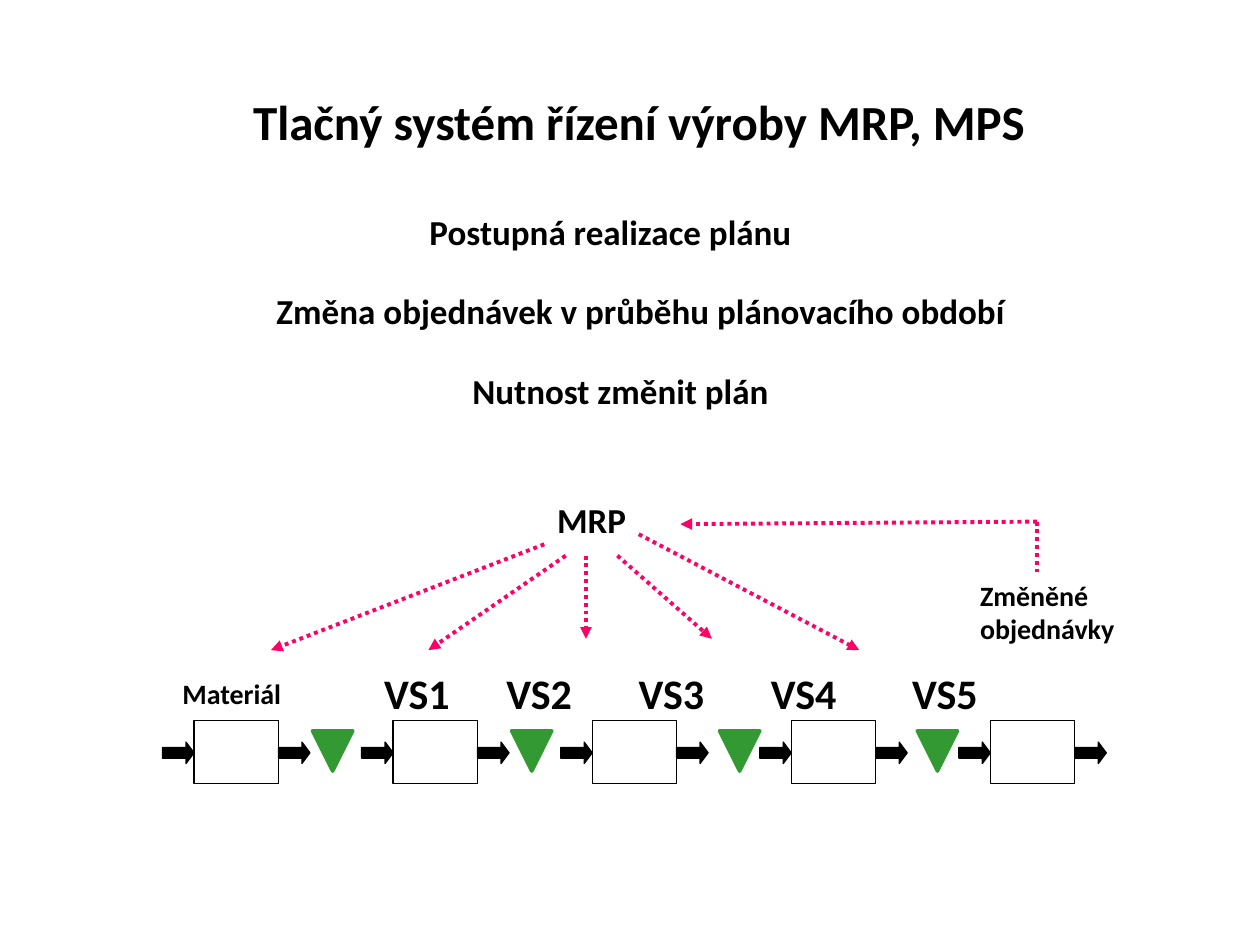
"""Build the slide on push production control with MRP and MPS."""
import lxml.etree
import pptx
import pptx.dml.color
import pptx.enum.dml
import pptx.enum.shapes
import pptx.enum.text
import pptx.oxml.ns
import pptx.util
from dataclasses import dataclass
from pptx.util import Inches

SHAPES = pptx.enum.shapes.MSO_SHAPE
ALIGN = pptx.enum.text.PP_ALIGN


@dataclass(frozen=True)
class Theme:
    """Colours, font and type sizes of the slide."""
    ink: str = "000000"
    paper: str = "FFFFFF"
    signal: str = "FF0066"
    buffer: str = "339933"
    font: str = "Calibri"
    title: int = 28
    station: int = 24
    body: int = 20
    label: int = 16


THEME = Theme()


def rgb(code):
    """Return the colour for a hex code."""
    return pptx.dml.color.RGBColor.from_string(code)


def apply(target, formats):
    """Set every attribute named in formats on target."""
    for name, value in formats.items():
        setattr(target, name, value)


def add_element(parent, tag, **attributes):
    """Append a DrawingML element to parent and return it."""
    return lxml.etree.SubElement(parent, pptx.oxml.ns.qn(tag), attributes)


def write(holder, wording, size, align):
    """Write one bold paragraph into a shape or text box and return it."""
    apply(holder.text_frame, {
        "word_wrap": True,
        "auto_size": pptx.enum.text.MSO_AUTO_SIZE.SHAPE_TO_FIT_TEXT,
        "vertical_anchor": pptx.enum.text.MSO_ANCHOR.TOP,
    })
    paragraph = holder.text_frame.paragraphs[0]
    paragraph.alignment = align
    run = paragraph.add_run()
    run.text = wording
    apply(run.font, {"name": THEME.font, "size": pptx.util.Pt(size), "bold": True})
    run.font.color.rgb = rgb(THEME.ink)
    return paragraph


def add_label(slide, area, wording, size, align=ALIGN.CENTER):
    """Add a text box and return its paragraph."""
    return write(slide.shapes.add_textbox(*map(Inches, area)), wording, size, align)


def add_block(slide, kind, area, fill, outline=None, weight=0.75, rotation=0):
    """Add a flat filled preset shape."""
    block = slide.shapes.add_shape(kind, *map(Inches, area))
    block.shadow.inherit = False
    block.rotation = rotation
    block.fill.solid()
    block.fill.fore_color.rgb = rgb(fill)
    if outline:
        block.line.color.rgb = rgb(outline)
        block.line.width = pptx.util.Pt(weight)
    else:
        block.line.fill.background()
    return block


def add_flow_arrow(slide, left):
    """Add a material flow arrow on the production line."""
    arrow = add_block(slide, SHAPES.RIGHT_ARROW, (left, 5.89, 0.25, 0.17),
                      THEME.ink, THEME.ink)
    arrow.adjustments[1] = 0.375


def add_signal(slide, start, end, pointed=True):
    """Add a dotted information line, with an arrowhead at its end if pointed."""
    signal = slide.shapes.add_connector(
        pptx.enum.shapes.MSO_CONNECTOR.STRAIGHT, *map(Inches, start + end))
    signal.line.color.rgb = rgb(THEME.signal)
    apply(signal.line, {"width": pptx.util.Pt(2.25),
                        "dash_style": pptx.enum.dml.MSO_LINE.ROUND_DOT})
    if pointed:
        add_element(signal.line._get_or_add_ln(), "a:tailEnd", type="triangle")
    add_element(signal._element.spPr, "a:effectLst")


def add_production_line(slide):
    """Add five stations with their flow arrows and the buffers between them."""
    first, pitch, width = 1.54, 1.58, 0.67
    for index in range(5):
        left = first + index * pitch
        add_block(slide, SHAPES.RECTANGLE, (left, 5.72, width, 0.5),
                  THEME.paper, THEME.ink)
        add_flow_arrow(slide, left - 0.25)
        add_flow_arrow(slide, left + width)
    for left in (2.48, 4.06, 5.71, 7.28):
        add_block(slide, SHAPES.ISOSCELES_TRIANGLE, (left, 5.8, 0.32, 0.32),
                  THEME.buffer, THEME.buffer, 2, 180)


def add_station_names(slide):
    """Add the station names in one line, spaced by tab stops."""
    names = "\t".join(f"VS{number}" for number in range(1, 6))
    line = add_label(slide, (2.95, 5.25, 5.54, 0.5), names, THEME.station, ALIGN.LEFT)
    stops = add_element(line._p.get_or_add_pPr(), "a:tabLst")
    for offset in (0.97, 2.02, 3.07, 4.19):
        add_element(stops, "a:tab", pos=str(Inches(offset)), algn="l")


def add_signals(slide):
    """Add the plan signals from MRP and the path of the changed orders."""
    plans = (
        ((4.32, 4.32), (2.15, 5.16)),
        ((4.49, 4.41), (3.4, 5.16)),
        ((4.65, 4.41), (4.65, 5.07)),
        ((4.9, 4.41), (5.65, 5.07)),
        ((5.07, 4.24), (6.82, 5.16)),
    )
    for start, end in plans:
        add_signal(slide, start, end)
    corner = (8.23, 4.14)
    add_signal(slide, corner, (5.4, 4.16))
    add_signal(slide, corner, (8.23, 4.54), pointed=False)


def add_statements(slide):
    """Add the title, the three statements and the diagram labels."""
    add_label(slide, (0.66, 0.68, 8.82, 0.57),
              "Tlačný systém řízení výroby MRP, MPS", THEME.title)
    for left, top, wording in ((1.3, 1.62, "Postupná realizace plánu"),
                               (1.38, 2.88, "Nutnost změnit plán")):
        panel = add_block(slide, SHAPES.RECTANGLE, (left, top, 7.09, 0.44), THEME.paper)
        write(panel, wording, THEME.body, ALIGN.CENTER)
    add_label(slide, (0.9, 2.25, 8.37, 0.44),
              "Změna objednávek v průběhu plánovacího období", THEME.body)
    add_label(slide, (3.82, 3.91, 1.75, 0.43), "MRP", THEME.body)
    add_label(slide, (1.3, 5.32, 1.08, 0.37), "Materiál", THEME.label)
    add_label(slide, (7.68, 4.54, 1.75, 0.64), "Změněné objednávky",
              THEME.label, ALIGN.LEFT)


def main():
    """Build the slide and save it."""
    deck = pptx.Presentation()
    apply(deck, {"slide_width": Inches(10), "slide_height": Inches(7.5)})
    slide = deck.slides.add_slide(deck.slide_layouts[6])
    add_production_line(slide)
    add_statements(slide)
    add_signals(slide)
    add_station_names(slide)
    deck.save("out.pptx")


if __name__ == "__main__":
    main()
